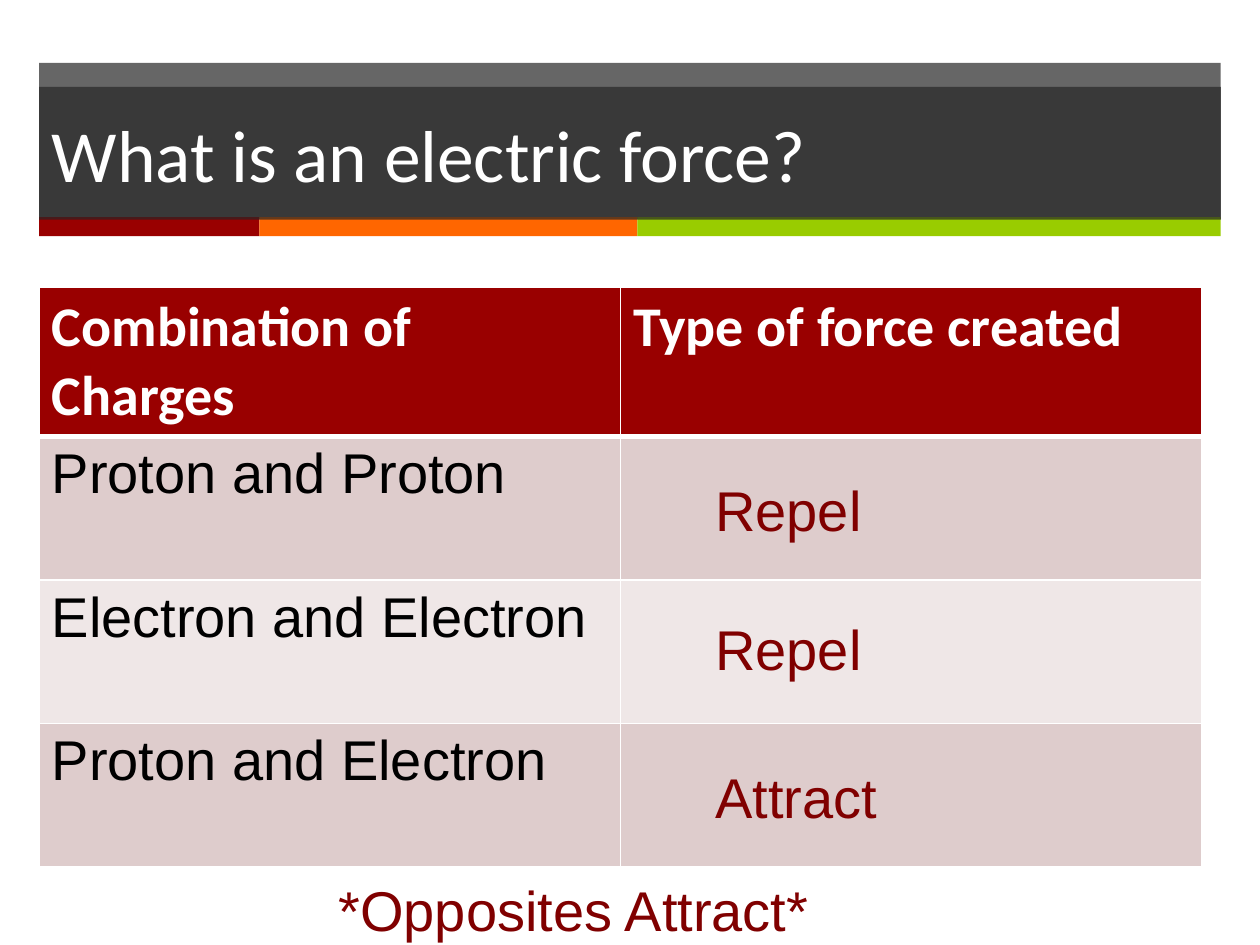
from lxml import etree
from pptx import Presentation
from pptx.dml.color import RGBColor
from pptx.enum import shapes, text
from pptx.oxml.ns import qn
from pptx.util import Cm, Pt

WHITE = RGBColor(0xFF, 0xFF, 0xFF)
BLACK = RGBColor(0, 0, 0)
CHARCOAL = RGBColor(0x26, 0x26, 0x26)
RED = RGBColor(0x99, 0x00, 0x00)
ORANGE = RGBColor(0xFF, 0x66, 0x00)
GREEN = RGBColor(0x99, 0xCC, 0x00)
MAROON = RGBColor(0x80, 0x00, 0x00)
BANDS = [RGBColor(0xDE, 0xCC, 0xCC), RGBColor(0xEF, 0xE7, 0xE7)]

# Content
TITLE = "What is an electric force?"
HEADERS = ["Combination of Charges", "Type of force created"]
CHARGES = ["Proton and Proton", "Electron and Electron", "Proton and Electron"]
ANSWERS = [("Repel", 9.47), ("Repel", 12.27), ("Attract", 15.24)]  # text, top
NOTE = "*Opposites Attract*"
STRIPES = [(4.44, RED), (7.62, ORANGE), (11.76, GREEN)]  # width, colour

# Layout in cm
LEFT, BAND_W = 0.79, 23.82
COL_W, HEAD_H, ROW_H = 11.72, 2.95, 2.89


def style(p, size, font, color, bold=False):
    for r in p.runs:
        r.font.size, r.font.name, r.font.bold = Pt(size), font, bold
        r.font.color.rgb = color


def fill(sp, color, alpha=None):
    sp.fill.solid()
    sp.fill.fore_color.rgb = color
    if alpha:
        clr = sp._element.spPr.find(qn("a:solidFill"))[0]
        etree.SubElement(clr, qn("a:alpha"), val=str(alpha * 1000))


def add_bar(s, x, y, w, h, color, alpha=None):
    sp = s.shapes.add_shape(shapes.MSO_SHAPE.RECTANGLE, Cm(x), Cm(y), Cm(w), Cm(h))
    sp.shadow.inherit = False
    sp.line.fill.background()
    fill(sp, color, alpha)


def add_label(s, words, x, y, w, align):
    tf = s.shapes.add_textbox(Cm(x), Cm(y), Cm(w), Cm(1.63)).text_frame
    tf.word_wrap = True
    tf.auto_size = text.MSO_AUTO_SIZE.SHAPE_TO_FIT_TEXT
    tf.text = words
    tf.paragraphs[0].alignment = align
    style(tf.paragraphs[0], 32, "Arial", MAROON)


def set_borders(cell, bottom):
    tc_pr = cell._tc.get_or_add_tcPr()
    for side, width in [("L", 1), ("R", 1), ("T", 1), ("B", bottom)]:
        ln = etree.SubElement(tc_pr, qn("a:ln" + side), w=str(Pt(width)))
        solid = etree.SubElement(ln, qn("a:solidFill"))
        etree.SubElement(solid, qn("a:srgbClr"), val=str(WHITE))


def add_charge_table(s):
    rows = [HEADERS] + [[c, ""] for c in CHARGES]
    height = HEAD_H + ROW_H * len(CHARGES)
    table = s.shapes.add_table(len(rows), 2, Cm(LEFT), Cm(5.79),
                               Cm(2 * COL_W), Cm(height)).table
    for col in table.columns:
        col.width = Cm(COL_W)
    for i, words in enumerate(rows):
        head = i == 0
        table.rows[i].height = Cm(HEAD_H if head else ROW_H)
        for cell, word in zip(table.rows[i].cells, words):
            set_borders(cell, 3 if head else 1)
            cell.fill.solid()
            cell.fill.fore_color.rgb = RED if head else BANDS[(i - 1) % 2]
            if head:
                cell.margin_right = Cm(0.4)  # wraps the long heading
            cell.text = word
            style(cell.text_frame.paragraphs[0], 32, "Calibri" if head else "Arial",
                  WHITE if head else BLACK, head)


def main():
    prs = Presentation()
    prs.slide_width, prs.slide_height = Cm(25.4), Cm(19.05)
    s = prs.slides.add_slide(prs.slide_layouts[5])

    # Header band and coloured stripes
    add_bar(s, LEFT, 1.27, BAND_W, 3.15, CHARCOAL, 70)
    x = LEFT
    for w, color in STRIPES:
        add_bar(s, x, 4.38, w, 0.38, color)
        x += w

    # Title, laid over the band
    title = s.shapes.title
    s.shapes._spTree.append(title._element)
    title.left, title.top = Cm(LEFT), Cm(1.75)
    title.width, title.height = Cm(BAND_W), Cm(2.68)
    fill(title, CHARCOAL, 70)
    tf = title.text_frame
    tf.text = TITLE
    tf.vertical_anchor = text.MSO_ANCHOR.MIDDLE
    tf.paragraphs[0].alignment = text.PP_ALIGN.LEFT
    style(tf.paragraphs[0], 42, "Calibri", WHITE)

    # Table, answers and closing note
    add_charge_table(s)
    for words, top in ANSWERS:
        add_label(s, words, 14.17, top, 5.79, text.PP_ALIGN.LEFT)
    add_label(s, NOTE, 4.63, 17.53, 13.87, text.PP_ALIGN.CENTER)

    prs.save("out.pptx")


if __name__ == "__main__":
    main()
